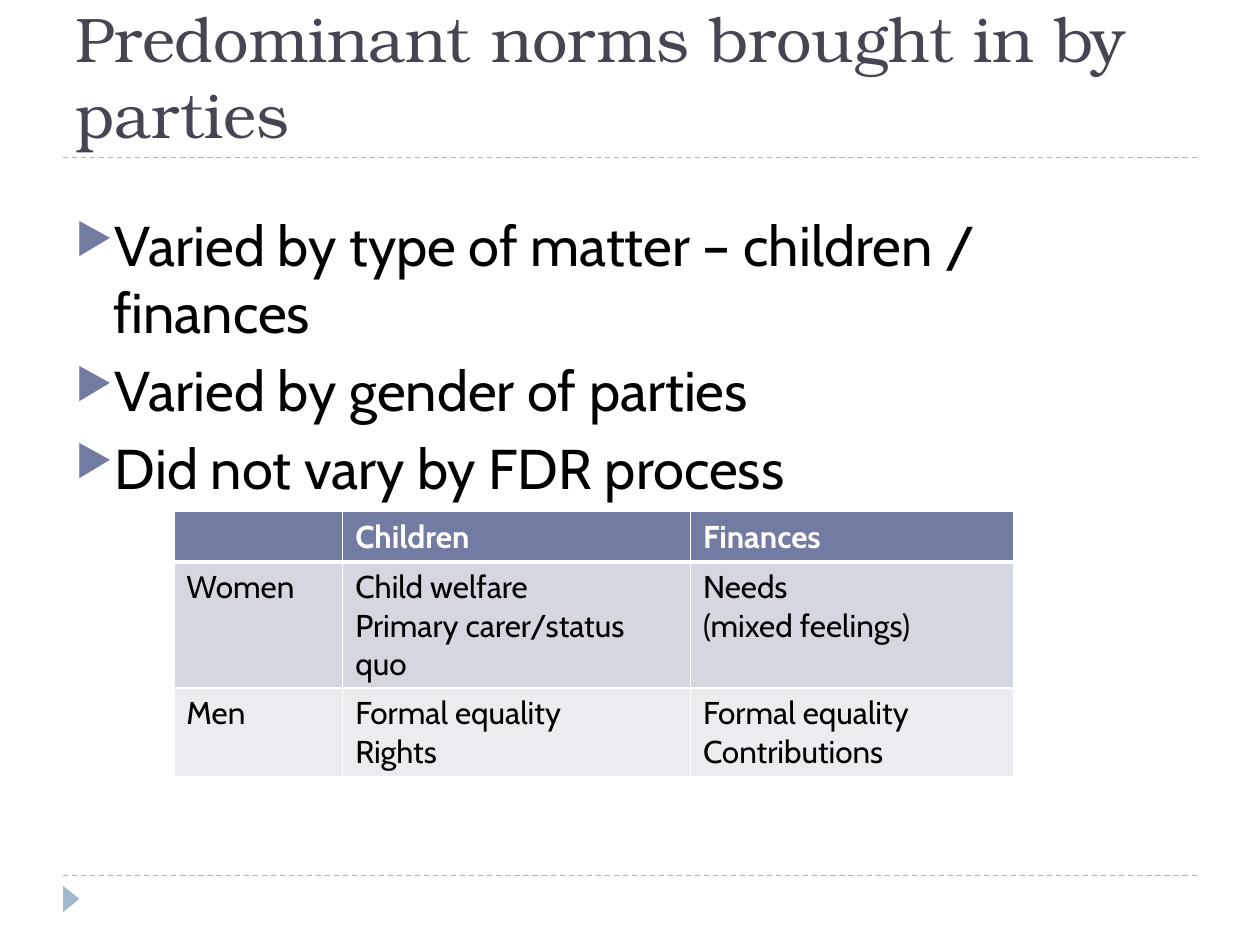
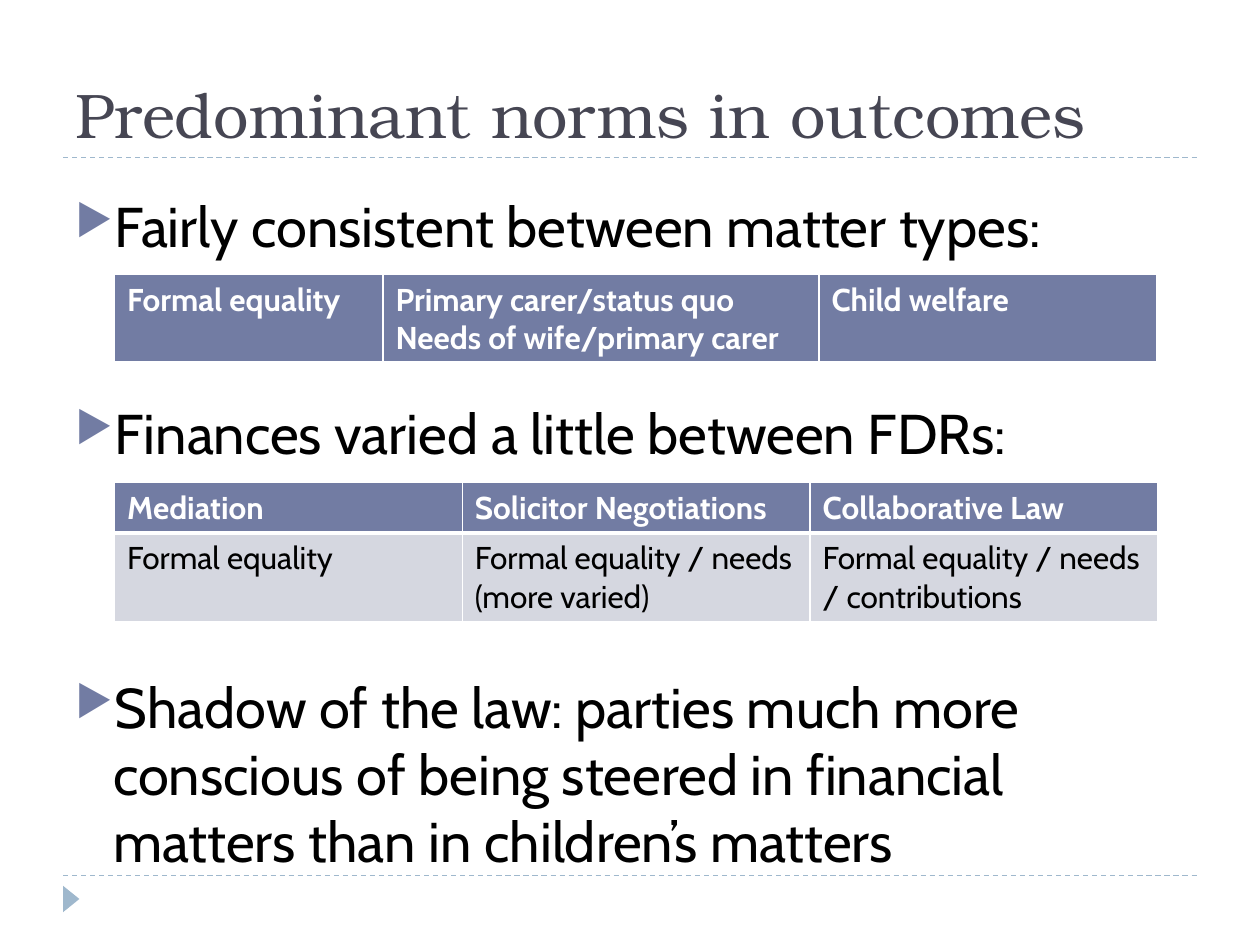
from lxml.etree import SubElement
from pptx import Presentation
from pptx.dml.color import RGBColor
from pptx.enum.dml import MSO_LINE
from pptx.enum.shapes import MSO_CONNECTOR, MSO_SHAPE
from pptx.enum.text import MSO_ANCHOR, MSO_AUTO_SIZE, PP_ALIGN
from pptx.oxml.ns import qn
from pptx.util import Inches, Pt

WHITE = RGBColor(0xFF, 0xFF, 0xFF)
BLACK = RGBColor(0x00, 0x00, 0x00)
SLATE = RGBColor(0x46, 0x46, 0x53)
INDIGO = RGBColor(0x72, 0x7C, 0xA3)
SKY = RGBColor(0x9F, 0xB8, 0xCD)
BAND_DARK = RGBColor(0xD5, 0xD7, 0xE0)
BAND_LIGHT = RGBColor(0xEB, 0xEC, 0xF0)
ROW_FILLS = [INDIGO, BAND_DARK, BAND_LIGHT]

TITLE_FONT = {"name": "TeX Gyre Bonum", "size": Pt(36), "color": SLATE}
BULLET_FONT = {"name": "Cabin", "size": Pt(32), "color": BLACK}
HEADER_FONT = {"name": "Cabin", "size": Pt(18), "color": WHITE, "bold": True}
CELL_FONT = {"name": "Cabin", "size": Pt(18), "color": BLACK, "bold": False}

presentation = Presentation()
presentation.slide_width = Inches(10)
presentation.slide_height = Inches(7.5)
MARGIN = presentation.slide_width // 20
CONTENT_WIDTH = presentation.slide_width - 2 * MARGIN
TITLE_RULE = Inches(1.25)
FOOTER_RULE = Inches(6.95)


def format_font(paragraph, values):
    for run in paragraph.runs:
        for name, value in values.items():
            if name == "color":
                run.font.color.rgb = value
            else:
                setattr(run.font, name, value)


def add_border(cell, edge, points):
    line = SubElement(cell._tc.get_or_add_tcPr(), qn(f"a:{edge}"), w=str(Pt(points)))
    fill = SubElement(line, qn("a:solidFill"))
    SubElement(fill, qn("a:srgbClr"), val=str(WHITE))


slides = [
    {
        "title": "Predominant norms brought in by parties",
        "body": (1.62, 5.11),
        "bullets": [
            ("Varied by type of matter – children / finances", 6),
            ("Varied by gender of parties", 6),
            ("Did not vary by FDR process", 6),
        ],
        "tables": [
            {
                "position": (1.38, 4.06),
                "columns": [1.34, 2.76, 2.57],
                "rows": [0.4, 1, 0.7],
                "cells": [
                    ["", "Children", "Finances"],
                    ["Women", "Child welfare\nPrimary carer/status quo", "Needs\n(mixed feelings)"],
                    ["Men", "Formal equality\nRights", "Formal equality\nContributions"],
                ],
            },
        ],
    },
    {
        "title": "Predominant norms in outcomes",
        "body": (1.47, 5.67),
        "bullets": [
            ("Fairly consistent between matter types:", 6),
            ("Finances varied a little between FDRs:", 80),
            ("Shadow of the law: parties much more conscious of being steered "
             "in financial matters than in children’s matters", 118),
        ],
        "tables": [
            {
                "position": (0.91, 2.18),
                "columns": [2.13, 3.46, 2.68],
                "rows": [0.68],
                "cells": [
                    ["Formal equality", "Primary carer/status quo\nNeeds of wife/primary carer", "Child welfare"],
                ],
            },
            {
                "position": (0.91, 3.83),
                "columns": [2.76, 2.76, 2.76],
                "rows": [0.4, 0.7],
                "cells": [
                    ["Mediation", "Solicitor Negotiations", "Collaborative Law"],
                    ["Formal equality", "Formal equality / needs\n(more varied)",
                     "Formal equality / needs / contributions"],
                ],
            },
        ],
    },
]

for content in slides:
    slide = presentation.slides.add_slide(presentation.slide_layouts[5])

    for height in (FOOTER_RULE, TITLE_RULE):
        rule = slide.shapes.add_connector(
            MSO_CONNECTOR.STRAIGHT, MARGIN, height, MARGIN + CONTENT_WIDTH, height)
        rule.line.color.rgb = SKY
        rule.line.width = Pt(0.75)
        rule.line.dash_style = MSO_LINE.DASH
        SubElement(rule._element.spPr, qn("a:effectLst"))

    marker = slide.shapes.add_shape(
        MSO_SHAPE.ISOSCELES_TRIANGLE, Inches(0.46), Inches(7.07), Inches(0.21), Inches(0.13))
    marker.rotation = 90
    marker.shadow.inherit = False
    marker.fill.solid()
    marker.fill.fore_color.rgb = SKY
    marker.line.fill.background()

    title = slide.shapes.title
    title.left, title.top, title.width = MARGIN, Inches(0.17), CONTENT_WIDTH
    title.height = TITLE_RULE - title.top
    title.text_frame.text = content["title"]
    title.text_frame.auto_size = MSO_AUTO_SIZE.NONE
    title.text_frame.vertical_anchor = MSO_ANCHOR.BOTTOM
    title.text_frame.paragraphs[0].alignment = PP_ALIGN.LEFT
    format_font(title.text_frame.paragraphs[0], TITLE_FONT)

    top, height = content["body"]
    body = slide.shapes.add_textbox(MARGIN, Inches(top), CONTENT_WIDTH, Inches(height))
    body.text_frame.word_wrap = True
    body.text_frame.text = "\n".join(text for text, space in content["bullets"])
    for paragraph, (text, space) in zip(body.text_frame.paragraphs, content["bullets"]):
        paragraph.space_before = Pt(space)
        format_font(paragraph, BULLET_FONT)
        properties = paragraph._p.get_or_add_pPr()
        properties.set("marL", str(Inches(0.3)))
        properties.set("indent", str(-Inches(0.3)))
        bullet_color = SubElement(properties, qn("a:buClr"))
        SubElement(bullet_color, qn("a:srgbClr"), val=str(INDIGO))
        SubElement(properties, qn("a:buSzPct"), val="76000")
        SubElement(properties, qn("a:buChar"), char="▶")

    for grid in content["tables"]:
        left, top = grid["position"]
        table = slide.shapes.add_table(
            len(grid["rows"]), len(grid["columns"]), Inches(left), Inches(top),
            Inches(sum(grid["columns"])), Inches(sum(grid["rows"]))).table
        for column, width in zip(table.columns, grid["columns"]):
            column.width = Inches(width)
        for row_index, (row, height) in enumerate(zip(table.rows, grid["rows"])):
            row.height = Inches(height)
            for cell, text in zip(row.cells, grid["cells"][row_index]):
                cell.text = text
                for paragraph in cell.text_frame.paragraphs:
                    format_font(paragraph, CELL_FONT if row_index else HEADER_FONT)
                add_border(cell, "lnL", 1)
                add_border(cell, "lnR", 1)
                add_border(cell, "lnT", 3 if row_index == 1 else 1)
                add_border(cell, "lnB", 3 if row_index == 0 else 1)
                cell.fill.solid()
                cell.fill.fore_color.rgb = ROW_FILLS[row_index]

presentation.save("out.pptx")
